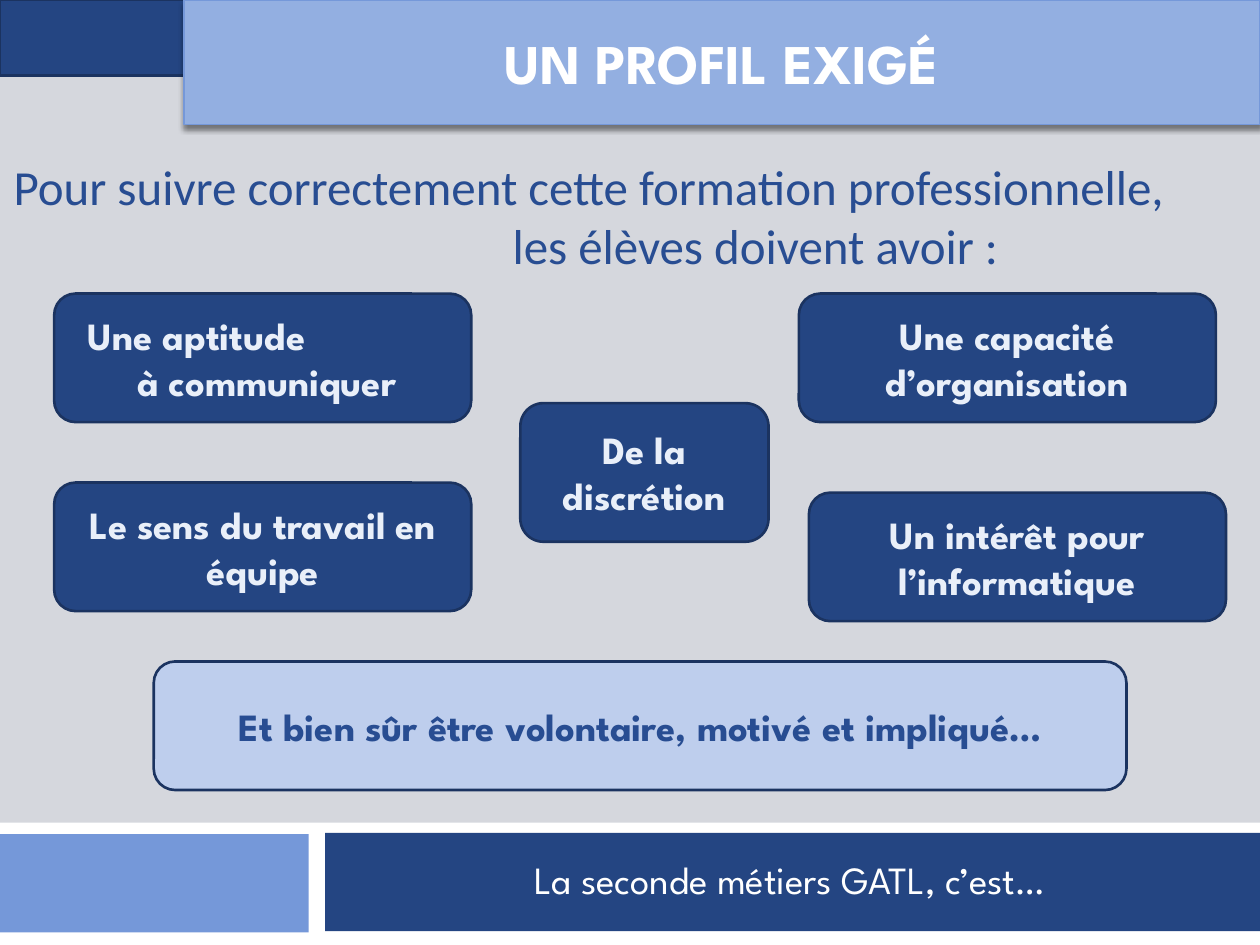
"""Build the slide on the profile expected of students in the training course."""
from lxml import etree
from pptx import Presentation
from pptx.dml.color import RGBColor
from pptx.enum.shapes import MSO_SHAPE
from pptx.enum.text import MSO_ANCHOR, PP_ALIGN
from pptx.oxml import parse_xml
from pptx.util import Inches, Pt

RECTANGLE, ROUNDED = MSO_SHAPE.RECTANGLE, MSO_SHAPE.ROUNDED_RECTANGLE
MIDDLE, LEFT, CENTER = MSO_ANCHOR.MIDDLE, PP_ALIGN.LEFT, PP_ALIGN.CENTER
HEADING_FONT, BODY_FONT = "League Spartan", "Calibri"
COLORS = {name: RGBColor.from_string(value) for name, value in {
    "background": "D5D7DD", "white": "FFFFFF", "navy": "244582", "outline": "1B3360",
    "blue": "7598D9", "title": "93AFE1", "pale": "BECEED", "ink": "284D92", "light": "E9EFF9",
}.items()}

presentation = Presentation()
presentation.slide_width, presentation.slide_height = Inches(10), Inches(7.5)
COLUMN = presentation.slide_width / 100
ROW = presentation.slide_height / 75
slide = presentation.slides.add_slide(presentation.slide_layouts[6])
slide.background.fill.solid()
slide.background.fill.fore_color.rgb = COLORS["background"]


def add_box(kind, area, fill, line=None, line_width=1.5):
    left, top, width, height = area
    shape = slide.shapes.add_shape(
        kind, round(left * COLUMN), round(top * ROW), round(width * COLUMN), round(height * ROW))
    shape.shadow.inherit = False
    if fill:
        shape.fill.solid()
        shape.fill.fore_color.rgb = COLORS[fill]
    else:
        shape.fill.background()
    if line:
        shape.line.color.rgb = COLORS[line]
        shape.line.width = Pt(line_width)
    else:
        shape.line.fill.background()
    return shape


def write(shape, lines, size, color, font=HEADING_FONT, bold=True, indents=()):
    frame = shape.text_frame
    frame.word_wrap = True
    frame.vertical_anchor = MIDDLE
    frame.text = "\n".join(lines)
    for paragraph in frame.paragraphs:
        paragraph.alignment = LEFT if indents else CENTER
        paragraph.font.name = font
        paragraph.font.size = Pt(size)
        paragraph.font.bold = bold
        paragraph.font.color.rgb = COLORS[color]
    for paragraph, indent in zip(frame.paragraphs, indents):
        paragraph._p.get_or_add_pPr().set("marL", str(round(indent * COLUMN)))


add_box(RECTANGLE, (0, 65.3, 100, 9.7), "white")
add_box(RECTANGLE, (-0.1, 66.2, 24.6, 7.8), "blue")
add_box(RECTANGLE, (25.8, 66.1, 74.2, 7.8), "navy")
footer = add_box(RECTANGLE, (27.2, 67.4, 70.9, 4.7), None)
write(footer, ["La seconde métiers GATL, c’est…"], 22, "white", bold=False)

add_box(RECTANGLE, (0, 0, 14.6, 6), "navy", "outline")
title = add_box(RECTANGLE, (14.6, 0, 85.4, 9.9), "title", "blue", 0.79)
write(title, ["UN PROFIL EXIGÉ"], 32, "white")
effects = title._element.spPr.find("{*}effectLst")
effects.append(parse_xml(
    f'<a:outerShdw xmlns:a="{etree.QName(effects).namespace}" blurRad="{Pt(3)}" '
    f'dist="{Pt(2.4)}" dir="5400000" rotWithShape="0">'
    '<a:srgbClr val="000000"><a:alpha val="45000"/></a:srgbClr></a:outerShdw>'))

introduction = add_box(RECTANGLE, (0, 11.6, 100, 11), None)
write(introduction,
      ["Pour suivre correctement cette formation professionnelle,", "les élèves doivent avoir :"],
      28, "ink", BODY_FONT, False, (0.1, 39.7))

QUALITIES = [
    ((4.3, 23.3, 33.1, 10.2), ["Une aptitude", "à communiquer"], (1.2, 5.1)),
    ((4.3, 38.3, 33.1, 10.2), ["Le sens du travail en équipe"], ()),
    ((63.4, 23.3, 33.1, 10.2), ["Une capacité d’organisation"], ()),
    ((64.2, 39.1, 33.1, 10.2), ["Un intérêt pour l’informatique"], ()),
    ((41.3, 32, 19.7, 11), ["De la discrétion"], ()),
]
for area, lines, indents in QUALITIES:
    write(add_box(ROUNDED, area, "navy", "outline"), lines, 22, "light", indents=indents)

conclusion = add_box(ROUNDED, (12.2, 52.5, 77.2, 10.2), "pale", "outline")
write(conclusion, ["Et bien sûr être volontaire, motivé et impliqué…"], 22, "ink")

presentation.save("out.pptx")
